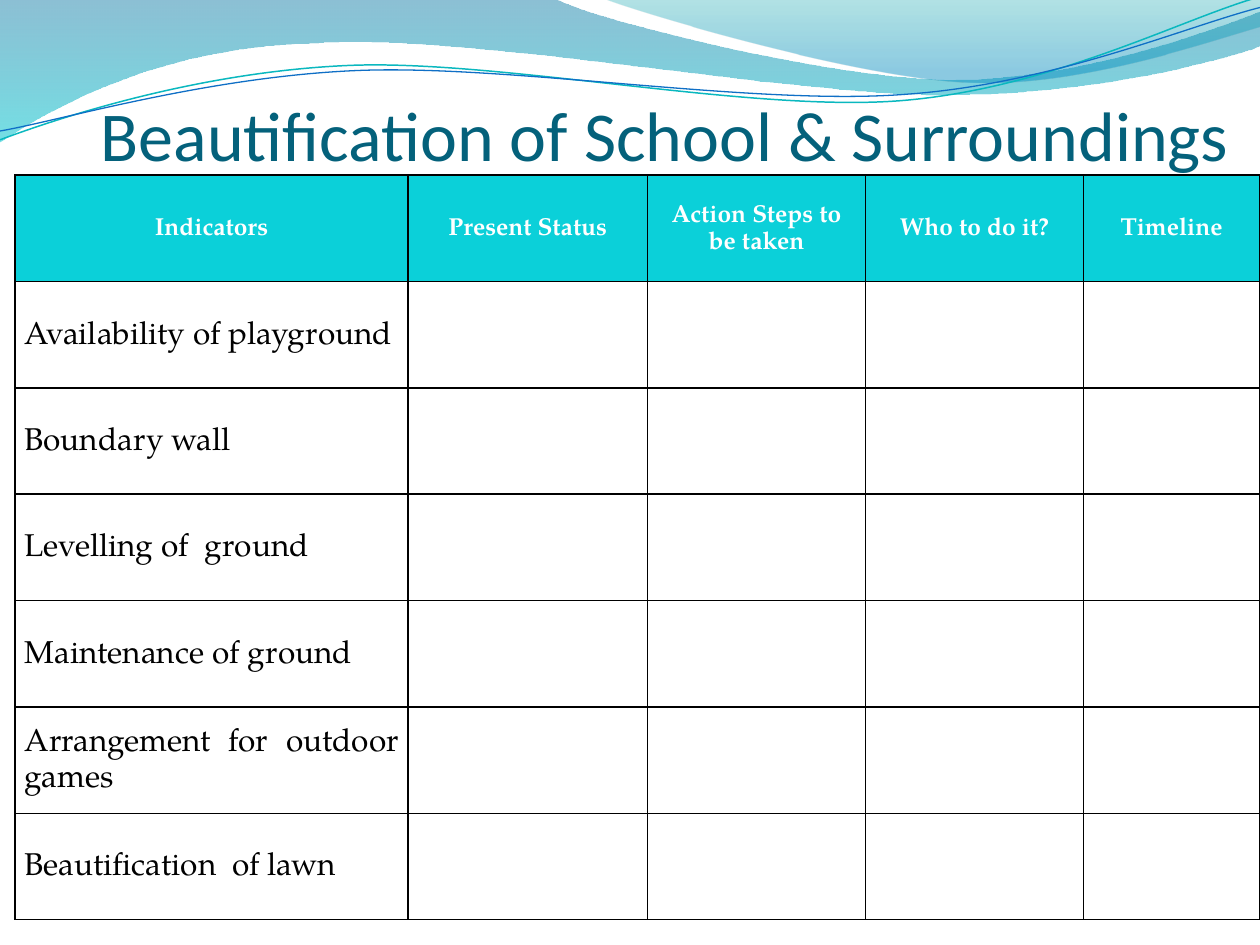
from math import cos, radians, sin
from lxml.etree import SubElement as Sub
from pptx import Presentation
from pptx.dml.color import RGBColor
from pptx.enum.text import MSO_ANCHOR as Anchor, MSO_AUTO_SIZE as Auto, PP_ALIGN as Align
from pptx.oxml.ns import qn
from pptx.util import Inches, Pt

WHITE, BLACK = RGBColor(255, 255, 255), RGBColor(0, 0, 0)
TEAL, CYAN = RGBColor(0x04, 0x61, 0x7B), RGBColor(0x0B, 0xD0, 0xD9)
AQUA, BLUE = RGBColor(0x0A, 0xB8, 0xBF), RGBColor(0x0F, 0x6F, 0xC6)
DEEP, LIGHT = RGBColor(0x00, 0x74, 0xA1), RGBColor(0x00, 0xC6, 0xCF)
SEA, SKY = RGBColor(0x00, 0xA1, 0xA9), RGBColor(0x00, 0x8B, 0xBF)

TITLE = "Beautification of School & Surroundings"
HEADS = ["Indicators", "Present Status", "Action Steps to be taken", "Who to do it?", "Timeline"]
ITEMS = ["Availability of playground", "Boundary wall", "Levelling of  ground",
         "Maintenance of ground", "Arrangement for outdoor games", "Beautification  of lawn"]
COLS = [3.12, 1.9, 1.73, 1.73, 1.4]
LEFT, TOP, HIGH = 0.12, 1.39, 5.91
UNITS, TILT = 1000, 2.7

WAVES = [
    ([(0, 0), (4.4, -0.01), (4.76, 0.17, 6.64, 0.63, 7.58, 0.63),
      (8.53, 0.63, 9.58, 0.26, 10, 0.09), (10.01, 0.36),
      (9.83, 0.44, 8.7, 0.76, 7.46, 0.75), (6.22, 0.75, 3.82, 0.28, 2.57, 0.34),
      (1.29, 0.36, 0.46, 0.83, -0.01, 1.13), (0, 0)], [(0, DEEP, 45), (1, LIGHT, 55)]),
    ([(4.79, -0.01), (5.09, 0.11, 6.82, 0.62, 7.69, 0.65),
      (8.56, 0.69, 9.61, 0.32, 10, 0.21), (10, 0), (4.79, -0.01)],
     [(0, SEA, 30), (0.8, SKY, 45)]),
]
LINES = [
    ([(0, 1.11), (0.48, 0.93, 1.58, 0.57, 2.77, 0.52), (3.95, 0.47, 5.93, 0.89, 7.13, 0.8),
      (8.33, 0.71, 9.38, 0.15, 9.98, -0.02)], (4.99, 0.58), AQUA, 0.85),
    ([(0, 1.04), (0.47, 0.96, 1.64, 0.61, 2.83, 0.56), (4.03, 0.51, 5.97, 0.84, 7.17, 0.75),
      (8.36, 0.67, 9.41, 0.21, 10, 0.06)], (5, 0.59), BLUE, 0.75),
]
HEAD = dict(size=Pt(14), bold=True, name="TeX Gyre Pagella")
BODY = dict(size=Pt(18), bold=False, name="TeX Gyre Pagella")
CELL = dict(margin_left=Pt(5.4), margin_right=Pt(5.4), margin_top=0,
            margin_bottom=0, vertical_anchor=Anchor.MIDDLE)
FRAME = dict(margin_left=0, margin_right=0, margin_top=Inches(0.05), margin_bottom=0,
             vertical_anchor=Anchor.BOTTOM, word_wrap=True, auto_size=Auto.NONE)
PLACE = dict(left=Inches(0.8), top=Inches(0.76), width=Inches(9), height=Inches(0.63))


def put(item, vals):
    """Set every attribute in a dict of values."""
    for key, val in vals.items():
        setattr(item, key, val)


def pairs(step):
    """Split a flat step into points."""
    return list(zip(step[::2], step[1::2]))


def turn(step, mid):
    """Turn a step clockwise about a centre."""
    c, s = cos(radians(TILT)), sin(radians(TILT))
    return [val for x, y in pairs(step)
            for val in (mid[0] + (x - mid[0]) * c - (y - mid[1]) * s,
                        mid[1] + (x - mid[0]) * s + (y - mid[1]) * c)]


def draw(slide, steps, close):
    """Add a freeform of straight lines and cubic curves."""
    pts = [(round(x * UNITS), round(y * UNITS)) for step in steps for x, y in pairs(step)]
    pen = slide.shapes.build_freeform(*pts[0], scale=Inches(1) / UNITS)
    pen.add_line_segments(pts[1:], close=close)
    shape = pen.convert_to_shape()
    shape.shadow.inherit = False
    marks = iter(shape._element.findall(".//" + qn("a:lnTo")))
    for step in steps[1:]:
        group = [next(marks) for _ in pairs(step)]
        if len(group) == 3:
            curve = group[0].makeelement(qn("a:cubicBezTo"), {})
            group[0].addprevious(curve)
            for mark in group:
                curve.append(mark[0])
                mark.getparent().remove(mark)
    return shape


def shade(shape, stops):
    """Fill a shape from top to bottom with clear colours."""
    shape.line.fill.background()
    shape.fill.gradient()
    shape.fill.gradient_angle = 270
    for stop, (pos, tone, _) in zip(shape.fill.gradient_stops, stops):
        put(stop, dict(position=pos))
        stop.color.rgb = tone
    tags = shape._element.findall(".//" + qn("a:srgbClr"))
    for tag, (_, _, alpha) in zip(tags, stops):
        Sub(tag, qn("a:alpha"), val=str(alpha * 1000))


def edge(cell):
    """Give a cell thin black borders."""
    props = cell._tc.get_or_add_tcPr()
    for i, side in enumerate(("lnL", "lnR", "lnT", "lnB")):
        line = props.makeelement(qn("a:" + side), {"w": str(Pt(1))})
        props.insert(i, line)
        Sub(Sub(line, qn("a:solidFill")), qn("a:srgbClr"), val=str(BLACK))


def grid(slide):
    """Add the table of indicators."""
    rows = [HEADS] + [[item] + [""] * (len(COLS) - 1) for item in ITEMS]
    table = slide.shapes.add_table(len(rows), len(COLS), Inches(LEFT), Inches(TOP),
                                   Inches(sum(COLS)), Inches(HIGH)).table
    for col, wide in zip(table.columns, COLS):
        col.width = Inches(wide)
    for r, row in enumerate(rows):
        table.rows[r].height = Inches(HIGH / len(rows))
        for c, text in enumerate(row):
            cell = table.cell(r, c)
            put(cell, CELL)
            cell.fill.solid()
            cell.fill.fore_color.rgb = WHITE if r else CYAN
            edge(cell)
            if text:
                cell.text = text
                para = cell.text_frame.paragraphs[0]
                put(para, dict(alignment=Align.JUSTIFY if r else Align.CENTER, line_spacing=1.15))
                font = para.runs[0].font
                put(font, BODY if r else HEAD)
                font.color.rgb = BLACK if r else WHITE


def main():
    """Build the slide and save it."""
    deck = Presentation()
    put(deck, dict(slide_width=Inches(10), slide_height=Inches(7.5)))
    slide = deck.slides.add_slide(deck.slide_layouts[5])
    for steps, stops in WAVES:
        shade(draw(slide, steps, True), stops)
    for steps, mid, tone, wide in LINES:
        curve = draw(slide, [turn(step, mid) for step in steps], False)
        curve.rotation = 360 - TILT
        curve.fill.background()
        curve.line.color.rgb = tone
        curve.line.width = Pt(wide)
    title = slide.shapes.title
    slide.shapes._spTree.append(title._element)
    put(title, PLACE)
    title.text = TITLE
    put(title.text_frame, FRAME)
    para = title.text_frame.paragraphs[0]
    para.alignment = Align.LEFT
    put(para.runs[0].font, dict(size=Pt(40), name="Calibri"))
    para.runs[0].font.color.rgb = TEAL
    grid(slide)
    deck.save("out.pptx")


if __name__ == "__main__":
    main()
